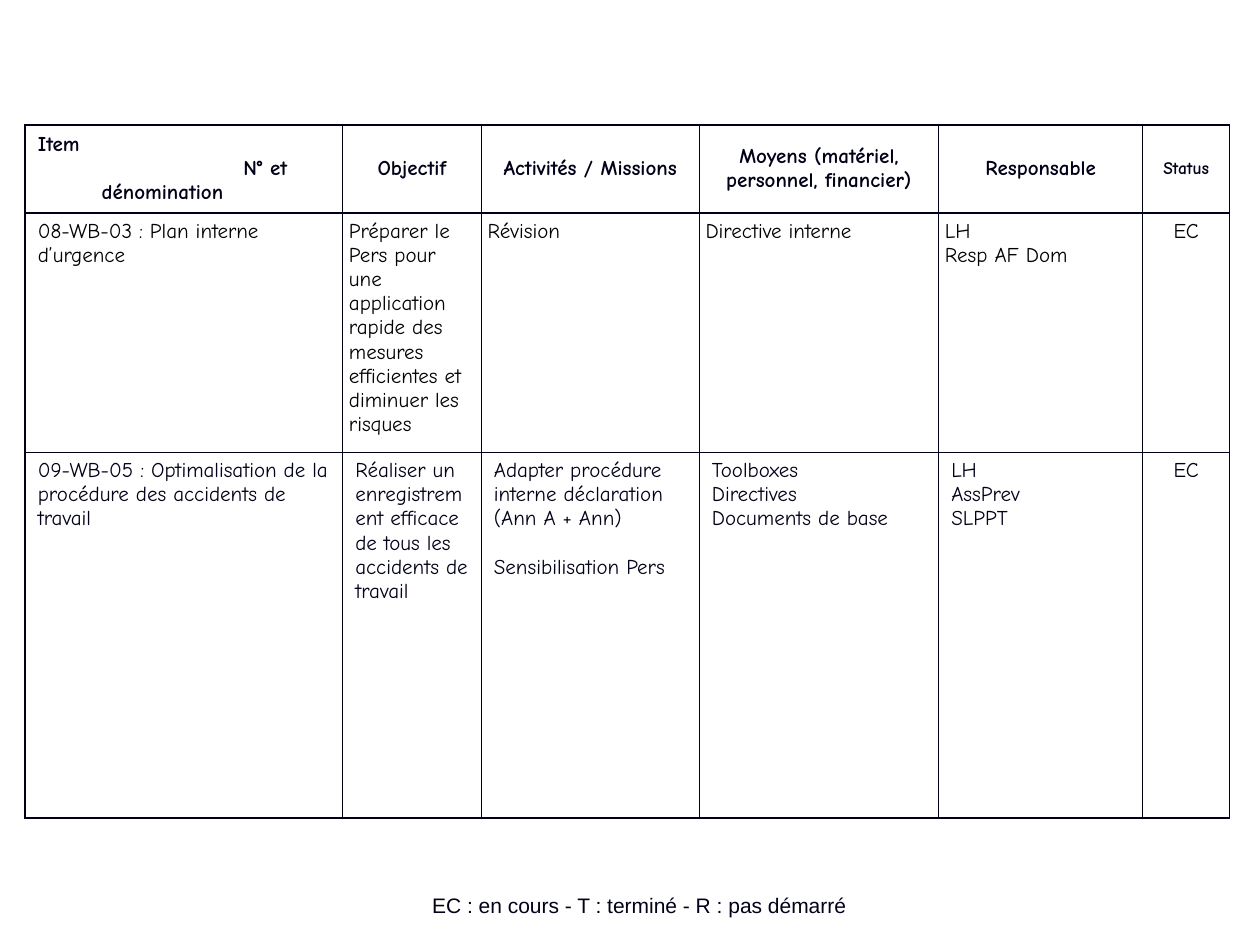
from lxml import etree
from pptx import Presentation
from pptx.dml.color import RGBColor
from pptx.enum.text import MSO_ANCHOR, PP_ALIGN
from pptx.oxml.ns import qn
from pptx.util import Inches, Pt

LEFT, CENTER, RIGHT = PP_ALIGN.LEFT, PP_ALIGN.CENTER, PP_ALIGN.RIGHT
TOP, MIDDLE, BOTTOM = MSO_ANCHOR.TOP, MSO_ANCHOR.MIDDLE, MSO_ANCHOR.BOTTOM
NAVY = RGBColor(0x00, 0x00, 0x18)
BLACK = RGBColor(0x00, 0x00, 0x00)
WHITE = RGBColor(0xFF, 0xFF, 0xFF)
BLANK_LAYOUT = 6


def write_text(frame, text, font="Comic Neue", size=12, color=NAVY, bold=False, align=LEFT):
    """Write one paragraph for each line of text."""
    frame.word_wrap = True
    for index, line in enumerate(text.split("\n")):
        paragraph = frame.paragraphs[0] if index == 0 else frame.add_paragraph()
        paragraph.alignment = align
        run = paragraph.add_run()
        run.text = line
        run.font.name = font
        run.font.size = Pt(size)
        run.font.bold = bold
        run.font.color.rgb = color


def set_borders(cell):
    properties = cell._tc.get_or_add_tcPr()
    for index, side in enumerate(("lnL", "lnR", "lnT", "lnB")):
        line = etree.Element(qn(f"a:{side}"), w=str(Pt(1)))
        fill = etree.SubElement(line, qn("a:solidFill"))
        etree.SubElement(fill, qn("a:srgbClr"), val=str(NAVY))
        properties.insert(index, line)


presentation = Presentation()
presentation.slide_width = Inches(10)
presentation.slide_height = Inches(7.5)
slide = presentation.slides.add_slide(presentation.slide_layouts[BLANK_LAYOUT])

legend = slide.shapes.add_textbox(Inches(2.32), Inches(6.83), Inches(5.51), Inches(0.5))
legend.text_frame.vertical_anchor = BOTTOM
write_text(legend.text_frame, "EC : en cours - T : terminé - R : pas démarré",
           font="Arial", align=CENTER)

column_widths = [2.52, 1.1, 1.73, 1.9, 1.62, 0.69]
row_heights = [0.68, 1.83, 2.9]
rows = [
    ["Item\nN° et\ndénomination", "Objectif", "Activités / Missions",
     "Moyens (matériel, personnel, financier)", "Responsable", "Status"],
    ["08-WB-03 : Plan interne d’urgence",
     "Préparer le Pers pour une application rapide des mesures efficientes "
     "et diminuer les risques",
     "Révision", "Directive interne", "LH\nResp AF Dom", "EC"],
    ["09-WB-05 : Optimalisation de la procédure des accidents de travail",
     "Réaliser un enregistrement efficace de tous les accidents de travail",
     "Adapter procédure\ninterne déclaration\n(Ann A + Ann)\nSensibilisation Pers",
     "Toolboxes\nDirectives\nDocuments de base", "LH\nAssPrev\nSLPPT", "EC"],
]
table = slide.shapes.add_table(
    len(rows), len(column_widths), Inches(0.2), Inches(0.99),
    Inches(sum(column_widths)), Inches(sum(row_heights))).table
table.first_row = False
table.horz_banding = False
for column, width in zip(table.columns, column_widths):
    column.width = Inches(width)
for row, height in zip(table.rows, row_heights):
    row.height = Inches(height)

status_column = len(column_widths) - 1
for row_index, texts in enumerate(rows):
    header = row_index == 0
    for column_index, text in enumerate(texts):
        cell = table.cell(row_index, column_index)
        cell.fill.solid()
        cell.fill.fore_color.rgb = WHITE
        set_borders(cell)
        narrow = row_index == 1 and column_index > 0
        cell.margin_left = cell.margin_right = Inches(0.05 if narrow else 0.1)
        cell.margin_top = cell.margin_bottom = Inches(0.05)
        cell.vertical_anchor = MIDDLE if header else TOP
        status = column_index == status_column
        write_text(cell.text_frame, text,
                   size=10 if header and status else 12,
                   color=BLACK if row_index == 1 else NAVY,
                   bold=header,
                   align=CENTER if header or status else LEFT)

# The item heading steps from left to right, then back to the centre
item, number, _ = table.cell(0, 0).text_frame.paragraphs
item.alignment = LEFT
number.alignment = RIGHT
number._p.get_or_add_pPr().set("marR", str(Inches(0.34)))

# One line of space separates the last activity from the others
table.cell(2, 2).text_frame.paragraphs[-1].space_before = Pt(13.8)

presentation.save("out.pptx")
